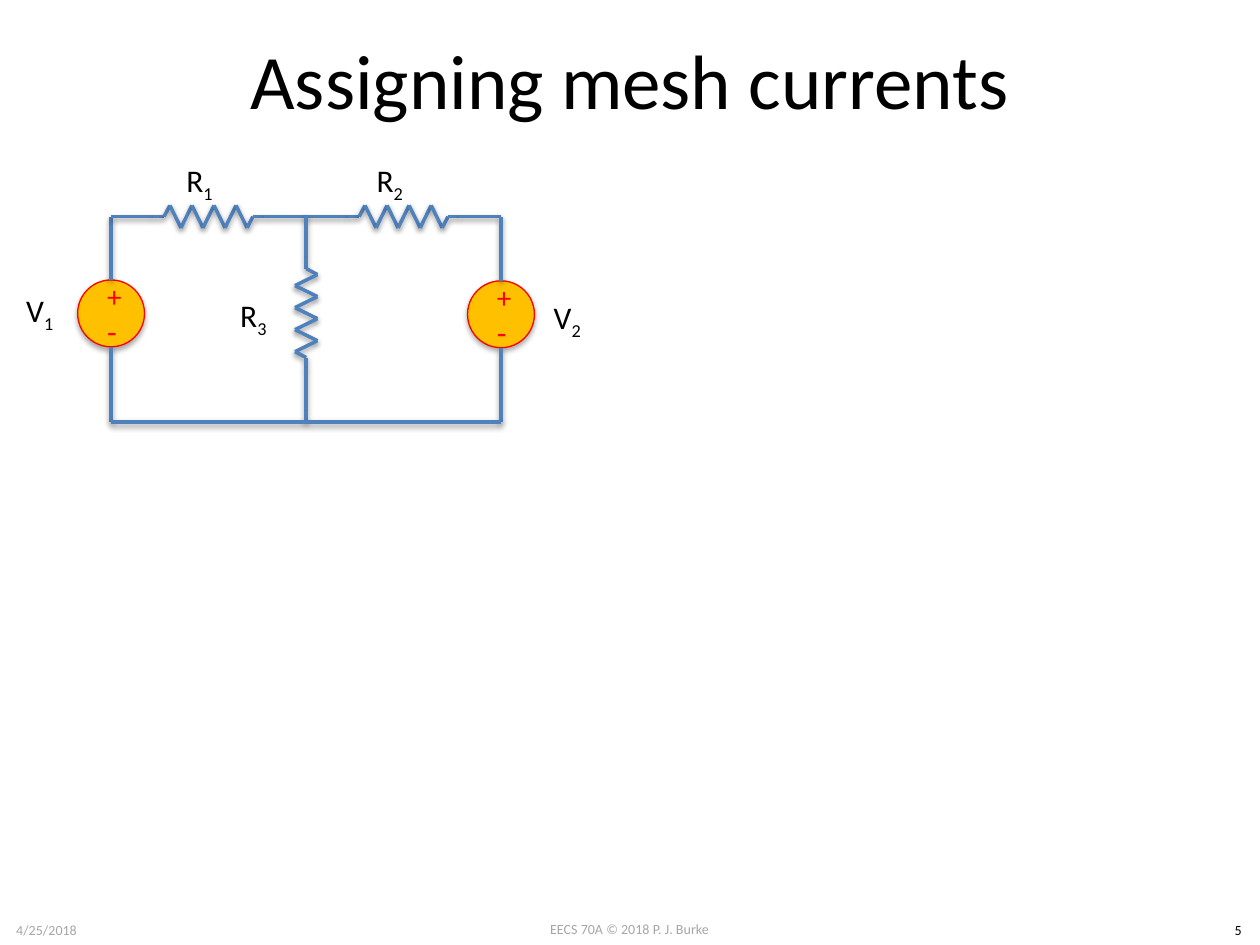
from itertools import pairwise

from lxml import etree
from pptx import Presentation
from pptx import util as u
from pptx.dml.color import RGBColor
from pptx.enum import shapes, text
from pptx.oxml.ns import qn

COLORS = {"ink": "000000", "muted": "A6A6A6", "wire": "4F81BD",
          "source": "FFC000", "polarity": "FF0000"}
LEFT, MIDDLE, RIGHT = 63.5, 175, 286.3
TOP, BOTTOM = 123.8, 241.2
BRANCH = 111.4
SOURCE_SIZE = 38.2


def rgb(name):
    return RGBColor.from_string(COLORS[name])


def add_shadow(effects, distance, opacity):
    outer = etree.SubElement(effects, qn("a:outerShdw"), {
        "blurRad": str(u.Pt(3.15)), "dist": str(u.Pt(distance)),
        "dir": "5400000", "rotWithShape": "0"})
    color = etree.SubElement(outer, qn("a:srgbClr"), val=COLORS["ink"])
    etree.SubElement(color, qn("a:alpha"), val=str(opacity * 1000))


def add_text(slide, box, content, size, color="ink", subscript="", align="CENTER", **frame_format):
    shape = slide.shapes.add_textbox(*map(u.Pt, box))
    frame = shape.text_frame
    for name, value in {"word_wrap": True, **frame_format}.items():
        setattr(frame, name, value)
    paragraph = frame.paragraphs[0]
    paragraph.alignment = getattr(text.PP_ALIGN, align)
    for part in filter(None, (content, subscript)):
        run = paragraph.add_run()
        run.text = part
        for name, value in {"name": "Calibri", "size": u.Pt(size)}.items():
            setattr(run.font, name, value)
        run.font.color.rgb = rgb(color)
    if subscript:
        run.font._element.set("baseline", "-25000")


def add_label(slide, left, top, width, letter, index):
    add_text(slide, (left, top, width, 29), letter, 18, subscript=index, align="LEFT",
             word_wrap=False, auto_size=text.MSO_AUTO_SIZE.SHAPE_TO_FIT_TEXT)


def add_wire(slide, start, end):
    wire = slide.shapes.add_connector(shapes.MSO_CONNECTOR.STRAIGHT,
                                      *map(u.Pt, (*start, *end)))
    wire.line.color.rgb = rgb("wire")
    wire.line.width = u.Pt(2)
    effects = etree.SubElement(wire._element.spPr, qn("a:effectLst"))
    add_shadow(effects, 1.6, 38)


def add_resistor(slide, left, top, vertical=False):
    peaks = [(33.6 + 6.3 * i, 6.4 if i % 2 else -6.4) for i in range(8)]
    profile = [(0, 0), (24, 0), (30.2, 0), *peaks, (81, 0), (87.2, 0), (BRANCH, 0)]
    points = [(left - side, top + along) if vertical else (left + along, top + side)
              for along, side in profile]
    for start, end in pairwise(points):
        add_wire(slide, start, end)


def add_source(slide, center, top):
    circle = slide.shapes.add_shape(
        shapes.MSO_SHAPE.OVAL, u.Pt(center - SOURCE_SIZE / 2), u.Pt(top),
        u.Pt(SOURCE_SIZE), u.Pt(SOURCE_SIZE))
    circle.fill.solid()
    circle.fill.fore_color.rgb = rgb("source")
    circle.line.color.rgb = rgb("polarity")
    circle.line.width = u.Pt(0.75)
    circle.shadow.inherit = False
    add_shadow(circle._element.spPr.find(qn("a:effectLst")), 1.8, 35)
    for sign, size, offset in (("+", 16.6, -2.9), ("-", 18, 17.3)):
        add_text(slide, (center - 9.4, top + offset, 18.8, 23.8), sign, size, "polarity",
                 vertical_anchor=text.MSO_ANCHOR.MIDDLE)
    add_wire(slide, (center, BOTTOM), (center, top + SOURCE_SIZE))
    add_wire(slide, (center, top), (center, TOP))


def main():
    presentation = Presentation()
    presentation.slide_width, presentation.slide_height = u.Pt(720), u.Pt(540)
    slide = presentation.slides.add_slide(presentation.slide_layouts[6])

    add_text(slide, (275.8, 522.5, 168, 17), "EECS 70A © 2018 P. J. Burke", 8, "muted")
    add_text(slide, (0, 523.2, 53.3, 17), "4/25/2018", 8, "muted")
    add_text(slide, (695, 523.2, 25, 17), "5", 8)
    add_text(slide, (36, 0, 648, 90), "Assigning mesh currents", 44,
             vertical_anchor=text.MSO_ANCHOR.MIDDLE)

    add_source(slide, LEFT, 160)
    add_resistor(slide, LEFT, TOP)
    add_resistor(slide, MIDDLE, TOP)
    add_resistor(slide, MIDDLE, TOP - 0.5, vertical=True)
    add_wire(slide, (MIDDLE, TOP + BRANCH - 0.5), (MIDDLE, BOTTOM))
    add_source(slide, RIGHT, 160.5)
    add_wire(slide, (LEFT, BOTTOM), (RIGHT, BOTTOM))

    for label in ((99.4, 88.6, 30.2, "R", "1"), (208.1, 88.6, 30.2, "R", "2"),
                  (130.2, 165.6, 30.2, "R", "3"), (7.9, 162.7, 31, "V", "1"),
                  (305.3, 167, 35.3, " V", "2")):
        add_label(slide, *label)

    presentation.save("out.pptx")


if __name__ == "__main__":
    main()
